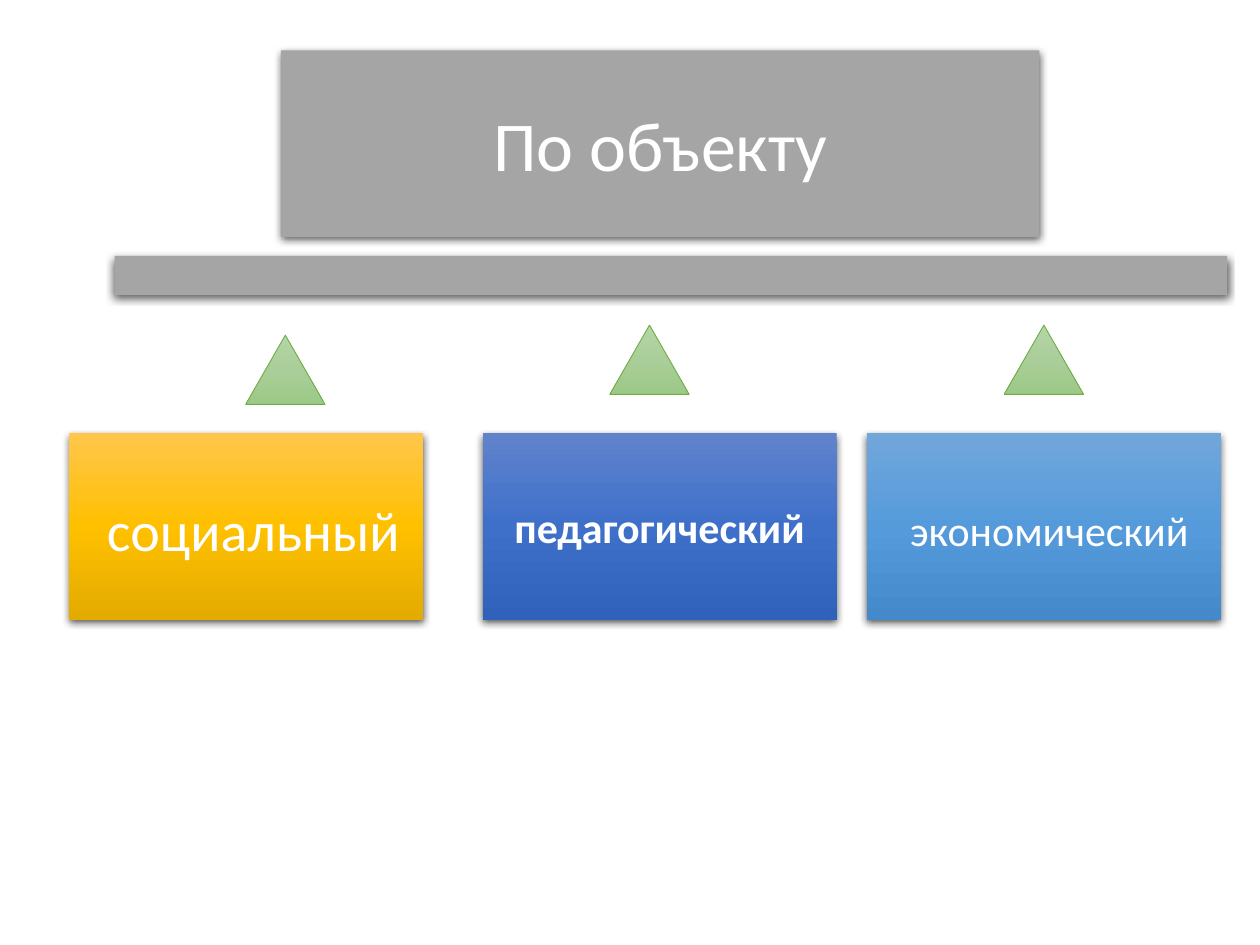
"""Build a slide that shows three kinds grouped by object."""
from copy import deepcopy

from lxml import etree
from pptx import Presentation
from pptx import util as u
from pptx.dml.color import RGBColor
from pptx.enum import shapes, text
from pptx.oxml import ns

WHITE = RGBColor(0xFF, 0xFF, 0xFF)
GRAY = RGBColor(0xA5, 0xA5, 0xA5)
EDGE = RGBColor(0x70, 0xAD, 0x47)
GOLD = [RGBColor(0xFF, 0xC6, 0x4B), RGBColor(0xFF, 0xC0, 0x00), RGBColor(0xE3, 0xAB, 0x00)]
NAVY = [RGBColor(0x61, 0x83, 0xCB), RGBColor(0x3E, 0x70, 0xCA), RGBColor(0x30, 0x62, 0xBB)]
BLUE = [RGBColor(0x71, 0xA6, 0xDB), RGBColor(0x55, 0x9B, 0xDB), RGBColor(0x44, 0x8A, 0xCA)]
GREEN = [RGBColor(0xB5, 0xD5, 0xA7), RGBColor(0xAA, 0xCE, 0x9A), RGBColor(0x9C, 0xC9, 0x87)]

TITLE = [("По объекту", 40)]
KINDS = [
    (0.55, GOLD, [(" ", 36), ("социальный", 32)], False),
    (3.83, NAVY, [("педагогический", 24)], True),
    (6.88, BLUE, [(" ", 28), ("экономический", 24)], False),
]
MARKS = [(1.95, 2.66), (4.84, 2.58), (7.97, 2.58)]
HIGH = 1.48

deck = Presentation()
deck.slide_width, deck.slide_height = u.Inches(10), u.Inches(7.5)
slide = deck.slides.add_slide(deck.slide_layouts[6])


def blend(fill, tones):
    fill.gradient()
    fill.gradient_angle = 270
    first = fill.gradient_stops[0]._gs
    first.addnext(deepcopy(first))
    for i, (stop, tone) in enumerate(zip(fill.gradient_stops, tones)):
        stop.position = i / 2
        stop.color.rgb = tone


def shade(shape):
    glow = shape._element.spPr.find(ns.qn("a:effectLst"))
    drop = etree.SubElement(glow, ns.qn("a:outerShdw"), blurRad=str(u.Pt(4.5)),
                            dist=str(u.Pt(1.5)), dir="5400000", algn="ctr", rotWithShape="0")
    tone = etree.SubElement(drop, ns.qn("a:srgbClr"), val="000000")
    etree.SubElement(tone, ns.qn("a:alpha"), val="63000")


def draw(form, box, tones):
    shape = slide.shapes.add_shape(form, *map(u.Inches, box))
    shape.shadow.inherit = False
    if isinstance(tones, list):
        blend(shape.fill, tones)
    else:
        shape.fill.solid()
        shape.fill.fore_color.rgb = tones
    return shape


def panel(box, tones, words=(), bold=False):
    shape = draw(shapes.MSO_SHAPE.RECTANGLE, box, tones)
    shape.line.fill.background()
    shade(shape)
    frame = shape.text_frame
    frame.word_wrap = True
    frame.vertical_anchor = text.MSO_ANCHOR.MIDDLE
    para = frame.paragraphs[0]
    para.alignment = text.PP_ALIGN.CENTER
    para.font.name, para.font.bold = "Calibri", bold
    para.font.color.rgb = WHITE
    for word, size in words:
        run = para.add_run()
        run.text, run.font.size = word, u.Pt(size)


panel((2.23, 0.4, 6.02, HIGH), GRAY, TITLE)
for left, tones, words, bold in KINDS:
    panel((left, 3.44, 2.81, HIGH), tones, words, bold)
panel((0.91, 2.03, 8.83, 0.31), GRAY)
for left, top in MARKS:
    mark = draw(shapes.MSO_SHAPE.ISOSCELES_TRIANGLE, (left, top, 0.63, 0.55), GREEN)
    mark.line.color.rgb = EDGE
    mark.line.width = u.Pt(0.5)

deck.save("out.pptx")
